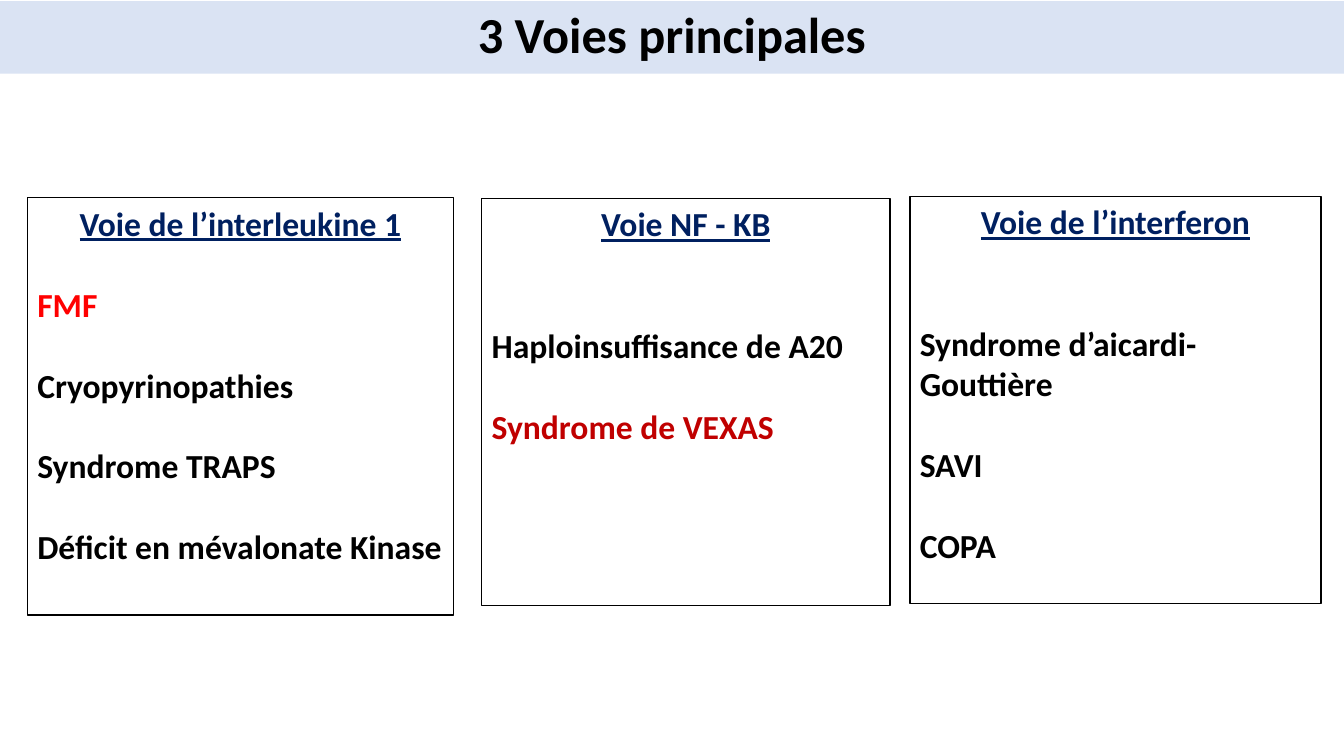
from pptx import Presentation
from pptx.dml.color import RGBColor
from pptx.enum.shapes import MSO_SHAPE
from pptx.enum.text import MSO_ANCHOR, PP_ALIGN
from pptx.util import Cm, Pt

COLORS = {
    "band": "DAE3F3",
    "navy": "002060",
    "black": "000000",
    "red": "FF0000",
    "dark_red": "C00000",
}
LINE_HEIGHT = 29

PATHWAYS = [
    ((0.69, 4.98, 10.74, 10.52), "Voie de l’interleukine 1", 1, [
        ("FMF", "red"),
        ("Cryopyrinopathies", "black"),
        ("Syndrome TRAPS", "black"),
        ("Déficit en mévalonate Kinase", "black"),
    ]),
    ((12.14, 5, 10.29, 10.26), "Voie NF - KB", 2, [
        ("Haploinsuffisance de A20", "black"),
        ("Syndrome de VEXAS", "dark_red"),
    ]),
    ((22.93, 4.95, 10.36, 10.26), "Voie de l’interferon", 2, [
        ("Syndrome d’aicardi-Gouttière", "black"),
        ("SAVI", "black"),
        ("COPA", "black"),
    ]),
]


def color(name):
    return RGBColor.from_string(COLORS[name])


def add_box(page, bounds, anchor):
    box = page.shapes.add_shape(MSO_SHAPE.RECTANGLE, *map(Cm, bounds))
    box.shadow.inherit = False
    box.text_frame.word_wrap = True
    box.text_frame.vertical_anchor = anchor
    return box


def write(para, text, size=24, ink="black", align=PP_ALIGN.LEFT,
          underline=False, before=0, spacing=1.0):
    para.alignment = align
    para.space_before = Pt(before)
    para.line_spacing = spacing
    span = para.add_run()
    span.text = text
    span.font.name = "Calibri"
    span.font.size = Pt(size)
    span.font.bold = True
    span.font.underline = underline
    span.font.color.rgb = color(ink)


def add_title(page, bounds, text):
    box = add_box(page, bounds, MSO_ANCHOR.MIDDLE)
    box.fill.solid()
    box.fill.fore_color.rgb = color("band")
    box.line.fill.background()
    write(box.text_frame.paragraphs[0], text, size=36,
          align=PP_ALIGN.CENTER, spacing=0.9)


def add_pathway(page, bounds, heading, skipped_lines, diseases):
    box = add_box(page, bounds, MSO_ANCHOR.TOP)
    box.fill.background()
    box.line.color.rgb = color("black")
    box.line.width = Pt(1)
    frame = box.text_frame
    write(frame.paragraphs[0], heading, ink="navy",
          align=PP_ALIGN.CENTER, underline=True)
    for index, (disease, ink) in enumerate(diseases):
        gap = LINE_HEIGHT * (1 if index else skipped_lines)
        write(frame.add_paragraph(), disease, ink=ink, before=gap)


def main():
    deck = Presentation()
    deck.slide_width = Cm(33.87)
    deck.slide_height = Cm(19.05)
    page = deck.slides.add_slide(deck.slide_layouts[6])
    add_title(page, (0, 0.03, 33.87, 1.83), "3 Voies principales")
    for pathway in PATHWAYS:
        add_pathway(page, *pathway)
    deck.save("out.pptx")


if __name__ == "__main__":
    main()
